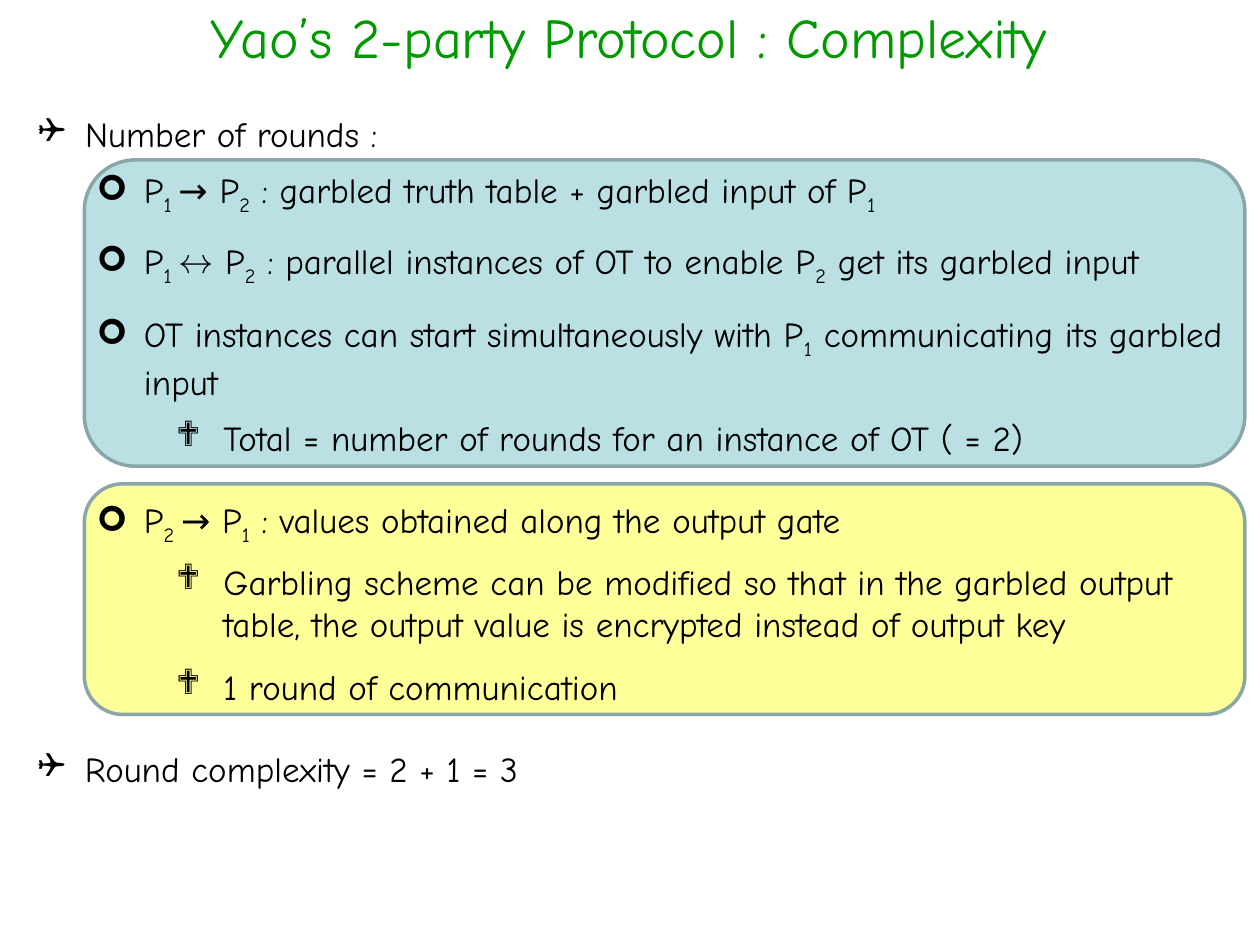
from lxml.etree import SubElement
from pptx import Presentation
from pptx.dml.color import RGBColor
from pptx.enum.shapes import MSO_SHAPE
from pptx.enum.text import MSO_ANCHOR, MSO_AUTO_SIZE, PP_ALIGN
from pptx.oxml.ns import qn
from pptx.util import Pt

FONT = "Comic Neue"
COLORS = {"title": "009900", "text": "000000", "edge": "8AA6A8",
          "blue": "BBE0E3", "yellow": "FFFF99"}
INDENT = Pt(27)


def place(shape, left, top, width, height):
    shape.left, shape.top = Pt(left), Pt(top)
    shape.width, shape.height = Pt(width), Pt(height)


def write(shape, text, size, color):
    """Fill the shape with one paragraph; every second part between bars is a subscript."""
    frame = shape.text_frame
    frame.word_wrap = True
    frame.auto_size = MSO_AUTO_SIZE.NONE
    frame.vertical_anchor = MSO_ANCHOR.TOP
    para = frame.paragraphs[0]
    para.space_before = Pt(0)
    for i, part in enumerate(text.split("|")):
        run = para.add_run()
        run.text = part
        run.font.name = FONT
        run.font.size = Pt(size)
        run.font.color.rgb = RGBColor.from_string(COLORS[color])
        if i % 2:
            run.font._element.set("baseline", "-25000")
    return para


prs = Presentation()
prs.slide_width, prs.slide_height = Pt(720), Pt(540)
slide = prs.slides.add_slide(prs.slide_layouts[1])
shapes = slide.shapes

# Cards behind the steps
for color, top, height in [("yellow", 276.5, 131.8), ("blue", 91.4, 175)]:
    card = shapes.add_shape(MSO_SHAPE.ROUNDED_RECTANGLE, 0, 0, 0, 0)
    place(card, 48.2, top, 663.2, height)
    card.shadow.inherit = False
    card.fill.solid()
    card.fill.fore_color.rgb = RGBColor.from_string(COLORS[color])
    card.line.color.rgb = RGBColor.from_string(COLORS["edge"])
    card.line.width = Pt(2)

# Title
title = shapes.title
place(title, -14.4, -2.2, 748, 45.4)
write(title, "Yao’s 2-party Protocol : Complexity", 32, "title").alignment = PP_ALIGN.CENTER

# Outline: level, top, height, text
LEVELS = [("❑", 14.4, 698), ("➢", 48.2, 663.2), ("❖", 93.6, 612)]
ONE, TWO = 31.7, 55.4
items = [
    (0, 60.5, ONE, "Number of rounds :"),
    (1, 92.9, ONE, "P|1 |→ P|2| : garbled truth table + garbled input of P|1"),
    (1, 133.2, ONE, "P|1 |↔ P|2| : parallel instances of OT to enable P|2| get its garbled input"),
    (1, 175, TWO, "OT instances can start simultaneously with P|1| communicating its garbled input"),
    (2, 234.7, ONE, "Total = number of rounds for an instance of OT ( = 2)"),
    (1, 281.5, ONE, "P|2 |→ P|1| : values obtained along the output gate"),
    (2, 316.8, TWO, "Garbling scheme can be modified so that in the garbled output table, "
                    "the output value is encrypted instead of output key"),
    (2, 376.6, ONE, "1 round of communication"),
    (0, 423.4, ONE, "Round complexity = 2 + 1 = 3"),
]
for i, (level, top, height, text) in enumerate(items):
    mark, left, width = LEVELS[level]
    box = shapes.add_textbox(0, 0, 0, 0) if i else slide.placeholders[1]
    place(box, left, top, width, height)
    para = write(box, text, 20, "text")
    para.alignment = PP_ALIGN.LEFT
    props = para._p.get_or_add_pPr()
    props.set("marL", str(INDENT))
    props.set("indent", str(-INDENT))
    SubElement(props, qn("a:buFont"), typeface="Wingdings")
    SubElement(props, qn("a:buChar"), char=mark)

prs.save("out.pptx")
